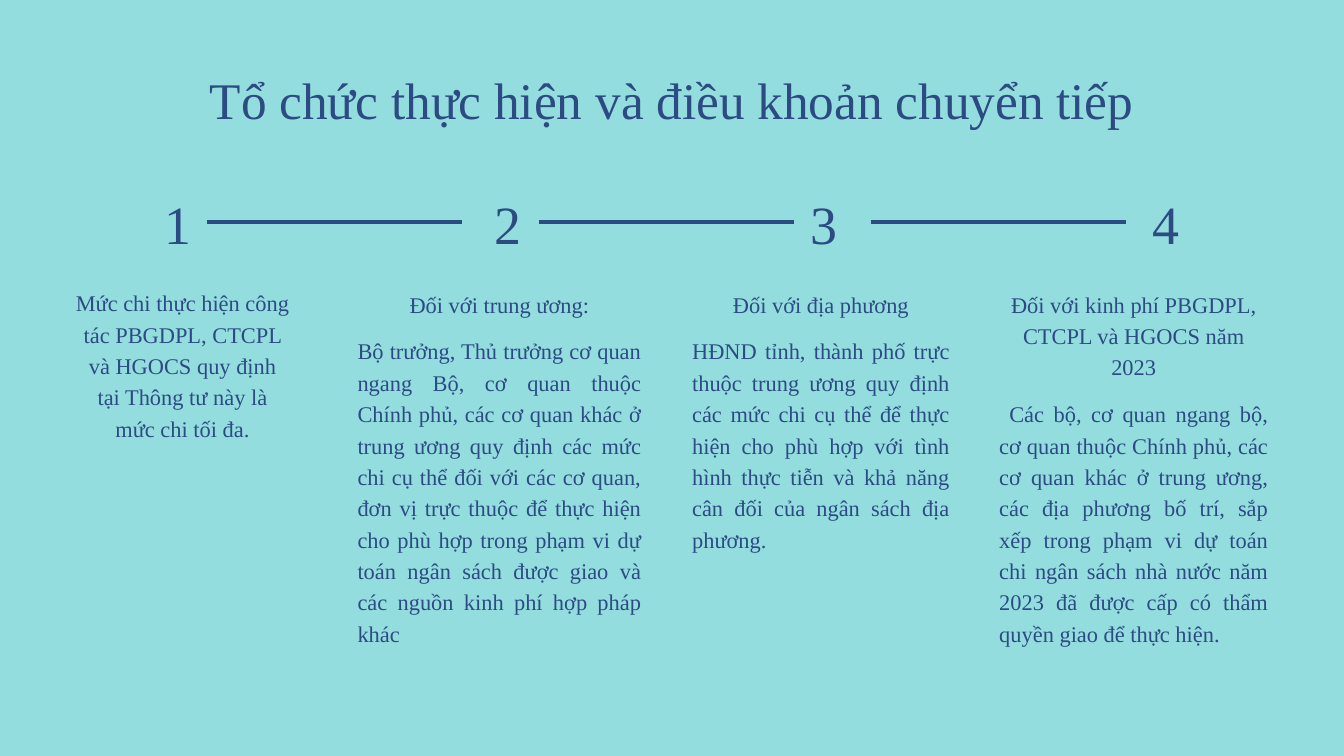
from dataclasses import dataclass

from lxml.etree import SubElement
from pptx import Presentation
from pptx.dml.color import RGBColor
from pptx.enum.shapes import MSO_CONNECTOR
from pptx.enum.text import MSO_ANCHOR, MSO_AUTO_SIZE, PP_ALIGN
from pptx.oxml.ns import qn
from pptx.util import Inches, Pt

COLS, ROWS = 20, 11.25  # one grid cell is one inch square


@dataclass(frozen=True)
class Theme:
    back: str = "94DDDE"
    ink: str = "2B4B82"
    font: str = "Times New Roman"
    title: float = 55
    mark: float = 57.7
    body: float = 24
    rule: float = 3.94
    lead: float = 33.6  # line pitch of body text, in points


def write(frame, text, *, font, size, color, lead,
          align=PP_ALIGN.CENTER, track=0, indent=0):
    """Fill a frame with one paragraph; track is in points, indent in cells."""
    frame.word_wrap = True
    frame.auto_size = MSO_AUTO_SIZE.NONE
    frame.vertical_anchor = MSO_ANCHOR.TOP
    frame.margin_left = frame.margin_right = 0
    frame.margin_top = frame.margin_bottom = 0
    para = frame.paragraphs[0]
    para.alignment = align
    para.line_spacing = Pt(lead)
    para.space_before = para.space_after = Pt(0)
    if indent:
        para._p.get_or_add_pPr().set("indent", str(Inches(indent)))
    run = para.add_run()
    run.text = text
    run.font.name = font
    run.font.size = Pt(size)
    run.font.color.rgb = RGBColor.from_string(color)
    if track:
        run._r.get_or_add_rPr().set("spc", str(round(track * 100)))


class Page:
    def __init__(self, deck, theme):
        self.theme = theme
        self.slide = deck.slides.add_slide(deck.slide_layouts[5])
        fill = self.slide.background.fill
        fill.solid()
        fill.fore_color.rgb = RGBColor.from_string(theme.back)

    def format(self, frame, text, size, lead, **style):
        write(frame, text, font=self.theme.font, color=self.theme.ink,
              size=size, lead=lead, **style)

    def title(self, text, col, row, wide, high):
        head = self.slide.shapes.title
        head.left, head.top = Inches(col), Inches(row)
        head.width, head.height = Inches(wide), Inches(high)
        self.format(head.text_frame, text, self.theme.title, 66)

    def text(self, text, col, row, wide, high, size=None, lead=None, **style):
        box = self.slide.shapes.add_textbox(
            Inches(col), Inches(row), Inches(wide), Inches(high))
        self.format(box.text_frame, text, size or self.theme.body,
                    lead or self.theme.lead, **style)

    def mark(self, text, col):
        self.text(text, col, 2.67, 0.87, 1.13, size=self.theme.mark,
                  lead=80.8, track=9.9)

    def rule(self, col, row, wide):
        line = self.slide.shapes.add_connector(
            MSO_CONNECTOR.STRAIGHT, Inches(col), Inches(row),
            Inches(col + wide), Inches(row))
        line.line.color.rgb = RGBColor.from_string(self.theme.ink)
        line.line.width = Pt(self.theme.rule)
        SubElement(line._element.spPr, qn("a:effectLst"))

    def column(self, col, row, wide, head, lines, body="", rows=0, indent=0):
        """Set a centred heading with a justified body below it."""
        pitch = self.theme.lead / 72
        self.text(head, col, row, wide, lines * pitch)
        if body:
            self.text(body, col, row + lines * pitch + 0.23, wide,
                      rows * pitch, align=PP_ALIGN.JUSTIFY, indent=indent)


# left, top, width, heading, its lines, body, its lines, first-line indent
STEPS = [
    (1.12, 4.24, 3.19,
     "Mức chi thực hiện công tác PBGDPL, CTCPL và HGOCS quy định "
     "tại Thông tư này là mức chi tối đa.", 5),
    (5.32, 4.26, 4.22, "Đối với trung ương:", 1,
     "Bộ trưởng, Thủ trưởng cơ quan ngang Bộ, cơ quan thuộc Chính phủ, "
     "các cơ quan khác ở trung ương quy định các mức chi cụ thể đối với "
     "các cơ quan, đơn vị trực thuộc để thực hiện cho phù hợp trong phạm vi "
     "dự toán ngân sách được giao và các nguồn kinh phí hợp pháp khác", 10),
    (10.3, 4.26, 3.83, "Đối với địa phương", 1,
     "HĐND tỉnh, thành phố trực thuộc trung ương quy định các mức chi cụ thể "
     "để thực hiện cho phù hợp với tình hình thực tiễn và khả năng cân đối "
     "của ngân sách địa phương.", 7),
    (14.87, 4.26, 4, "Đối với kinh phí PBGDPL, CTCPL và HGOCS năm 2023", 3,
     "Các bộ, cơ quan ngang bộ, cơ quan thuộc Chính phủ, các cơ quan khác "
     "ở trung ương, các địa phương bố trí, sắp xếp trong phạm vi dự toán "
     "chi ngân sách nhà nước năm 2023 đã được cấp có thẩm quyền giao "
     "để thực hiện.", 8, 0.15),
]
MARKS = [2.21, 7.13, 11.82, 16.92]


def main():
    deck = Presentation()
    deck.slide_width, deck.slide_height = Inches(COLS), Inches(ROWS)
    page = Page(deck, Theme())
    page.title("Tổ chức thực hiện và điều khoản chuyển tiếp",
               1.23, 1.01, COLS - 2 * 1.23, 1.02)
    for step in STEPS:
        page.column(*step)
    for num, col in enumerate(MARKS, 1):
        page.mark(str(num), col)
    for gap in range(len(MARKS) - 1):
        page.rule(3.08 + gap * 4.94, 3.3, 3.8)
    deck.save("out.pptx")


if __name__ == "__main__":
    main()
